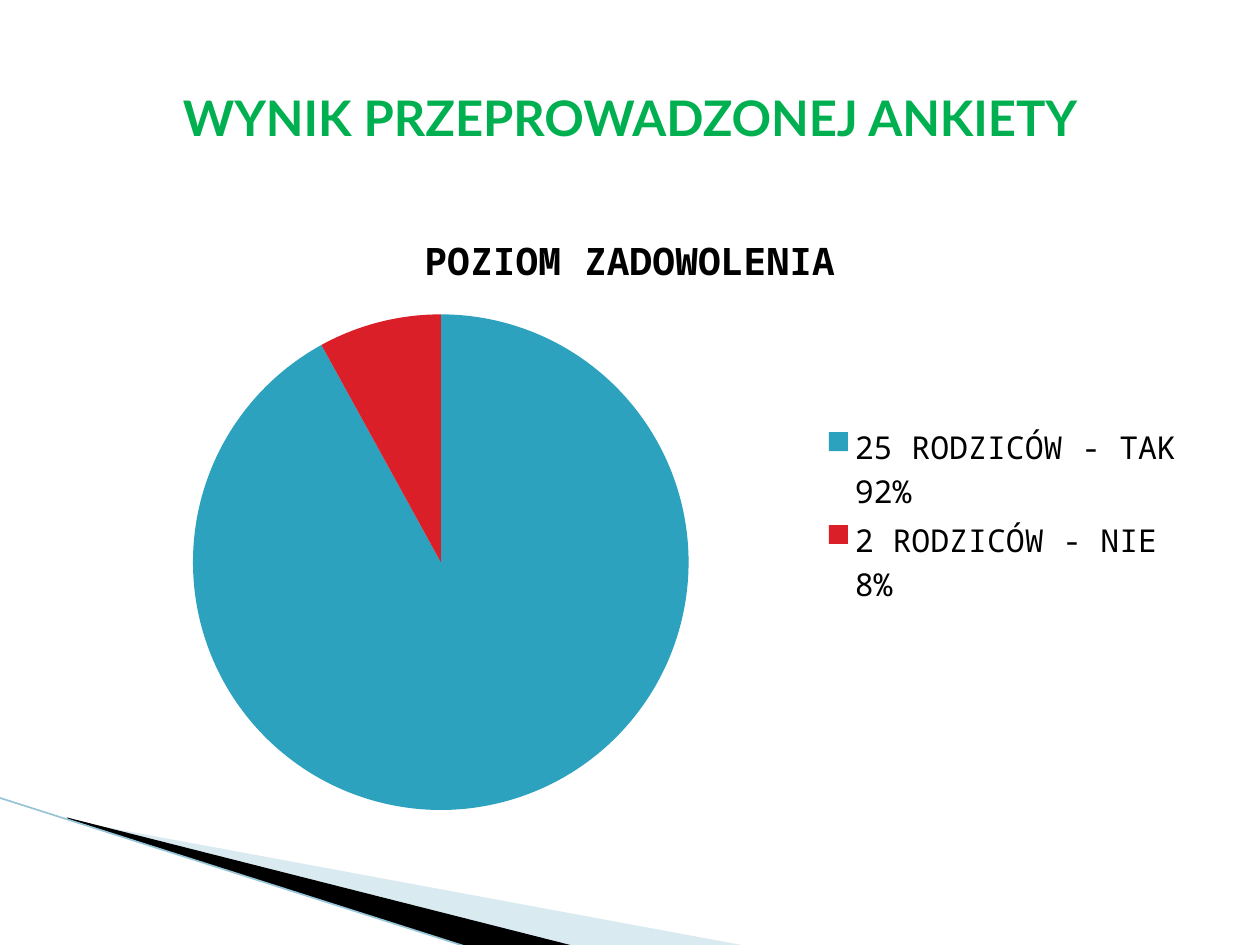
from dataclasses import dataclass
from typing import Optional

from lxml import etree
from pptx import Presentation
from pptx import util as u
from pptx.chart.data import CategoryChartData
from pptx.dml.color import RGBColor
from pptx.enum import chart as charts, shapes, text
from pptx.oxml.ns import qn

GREEN = RGBColor(0x00, 0xB0, 0x50)
TEAL = RGBColor(0x2D, 0xA2, 0xBF)
RED = RGBColor(0xDA, 0x1F, 0x28)
PALE_BLUE = RGBColor(0xA0, 0xCB, 0xDC)
EDGE_BLUE = RGBColor(0x97, 0xC5, 0xD8)
BLACK = RGBColor(0, 0, 0)
TITLE_FONT = "Lato"
CHART_FONT = "Noto Sans Mono"


@dataclass
class Wedge:
    points: list[tuple[float, float]]  # centimetres
    color: RGBColor
    opacity: Optional[int] = None  # percent


@dataclass
class Slice:
    label: str
    value: int
    color: RGBColor


WEDGES = [
    Wedge([(1.4, 16.54), (15.11, 19.08), (11.58, 19.08), (1.4, 16.51)], PALE_BLUE, 40),
    Wedge([(1.35, 16.48), (11.61, 19.08), (9.45, 19.1), (1.37, 16.51)], BLACK),
]
SLICES = [
    Slice("25 RODZICÓW - TAK 92%", 92, TEAL),
    Slice("2 RODZICÓW - NIE 8%", 8, RED),
]


def add_wedge(page, wedge: Wedge) -> None:
    start, *rest = [(u.Cm(x), u.Cm(y)) for x, y in wedge.points]
    builder = page.shapes.build_freeform(*start)
    builder.add_line_segments(rest, close=True)
    shape = builder.convert_to_shape()
    shape.shadow.inherit = False
    shape.line.fill.background()
    shape.fill.solid()
    shape.fill.fore_color.rgb = wedge.color
    if wedge.opacity is not None:
        color = shape.fill._xPr.find(f".//{qn('a:srgbClr')}")
        etree.SubElement(color, qn("a:alpha"), val=str(wedge.opacity * 1000))


def add_edge(page) -> None:
    edge = page.shapes.add_connector(
        shapes.MSO_CONNECTOR.STRAIGHT, u.Cm(-0.02), u.Cm(16.08), u.Cm(9.45), u.Cm(19.1))
    edge.line.color.rgb = EDGE_BLUE
    edge.line.width = u.Pt(0.95)
    etree.SubElement(edge._element.spPr, qn("a:effectLst"))


def add_pie(page, name: str, slices: list[Slice]) -> None:
    data = CategoryChartData()
    data.categories = [item.label for item in slices]
    data.add_series(name, [item.value for item in slices])
    pie = page.shapes.add_chart(
        charts.XL_CHART_TYPE.PIE, u.Cm(1.27), u.Cm(4.11), u.Cm(22.86), u.Cm(12.57), data).chart
    pie.font.name = CHART_FONT
    pie.font.size = u.Pt(18)
    pie.font.color.rgb = BLACK

    pie.has_title = True
    pie.chart_title.include_in_layout = False
    span = pie.chart_title.text_frame.paragraphs[0].add_run()
    span.text = name
    span.font.name = CHART_FONT
    span.font.size = u.Pt(21.6)
    span.font.bold = True
    span.font.color.rgb = BLACK

    pie.has_legend = True
    pie.legend.position = charts.XL_LEGEND_POSITION.RIGHT
    pie.legend.include_in_layout = False

    plot = pie.plots[0]
    plot.vary_by_categories = True
    for index, item in enumerate(slices):
        fill = plot.series[0].points[index].format.fill
        fill.solid()
        fill.fore_color.rgb = item.color


def set_title(page, wording: str) -> None:
    box = page.shapes.title
    box.left, box.top, box.width, box.height = u.Cm(1.27), u.Cm(0.76), u.Cm(22.86), u.Cm(3.18)
    box.text_frame.vertical_anchor = text.MSO_ANCHOR.MIDDLE
    para = box.text_frame.paragraphs[0]
    para.alignment = text.PP_ALIGN.CENTER
    span = para.add_run()
    span.text = wording
    span.font.name = TITLE_FONT
    span.font.size = u.Pt(28)
    span.font.bold = True
    span.font.color.rgb = GREEN


def main() -> None:
    deck = Presentation()
    deck.slide_width, deck.slide_height = u.Cm(25.4), u.Cm(19.05)
    page = deck.slides.add_slide(deck.slide_layouts.get_by_name("Title Only"))

    # Corner decoration
    for wedge in WEDGES:
        add_wedge(page, wedge)
    add_edge(page)

    # Survey result
    add_pie(page, "POZIOM ZADOWOLENIA", SLICES)
    set_title(page, "WYNIK PRZEPROWADZONEJ ANKIETY")

    deck.save("out.pptx")


if __name__ == "__main__":
    main()
